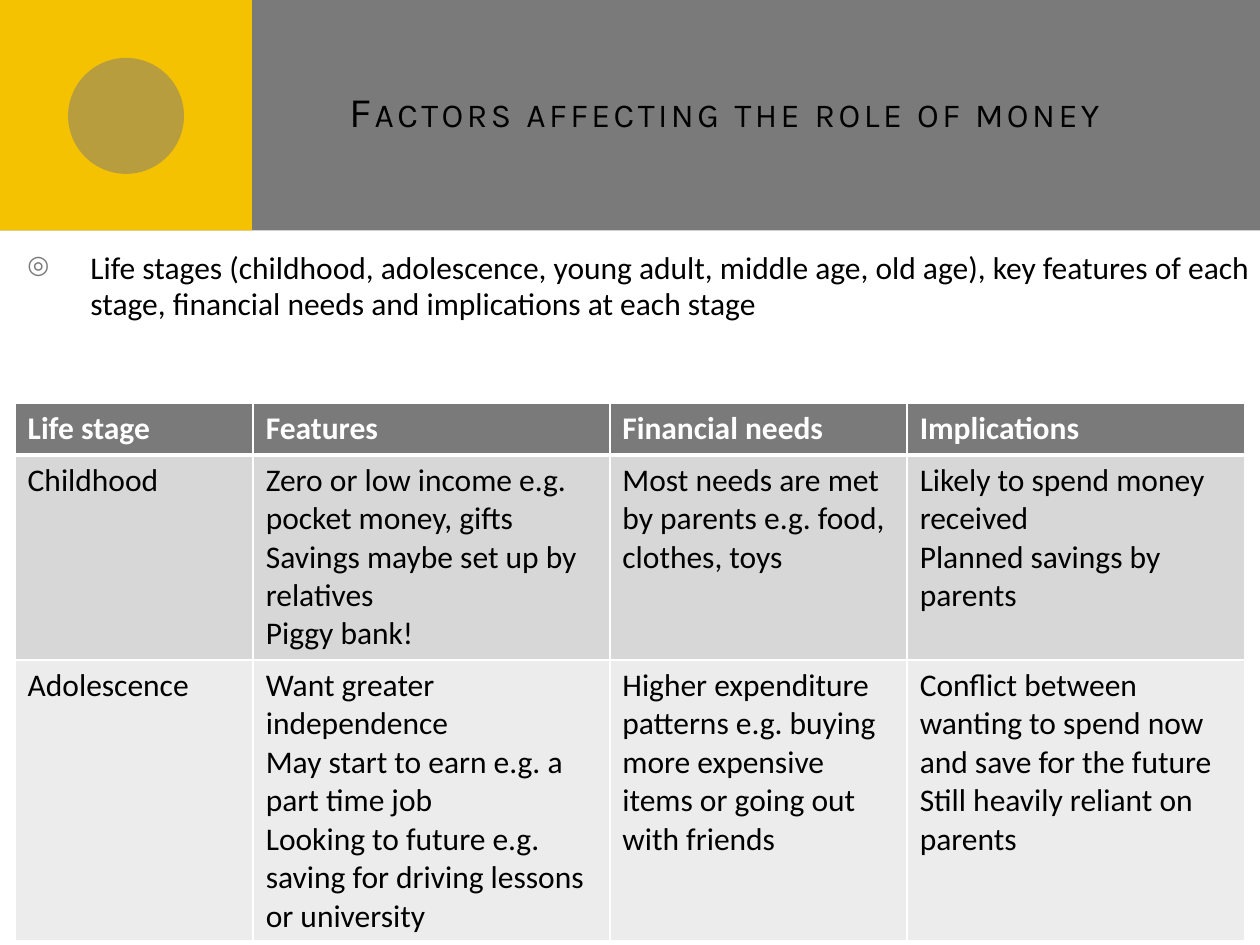
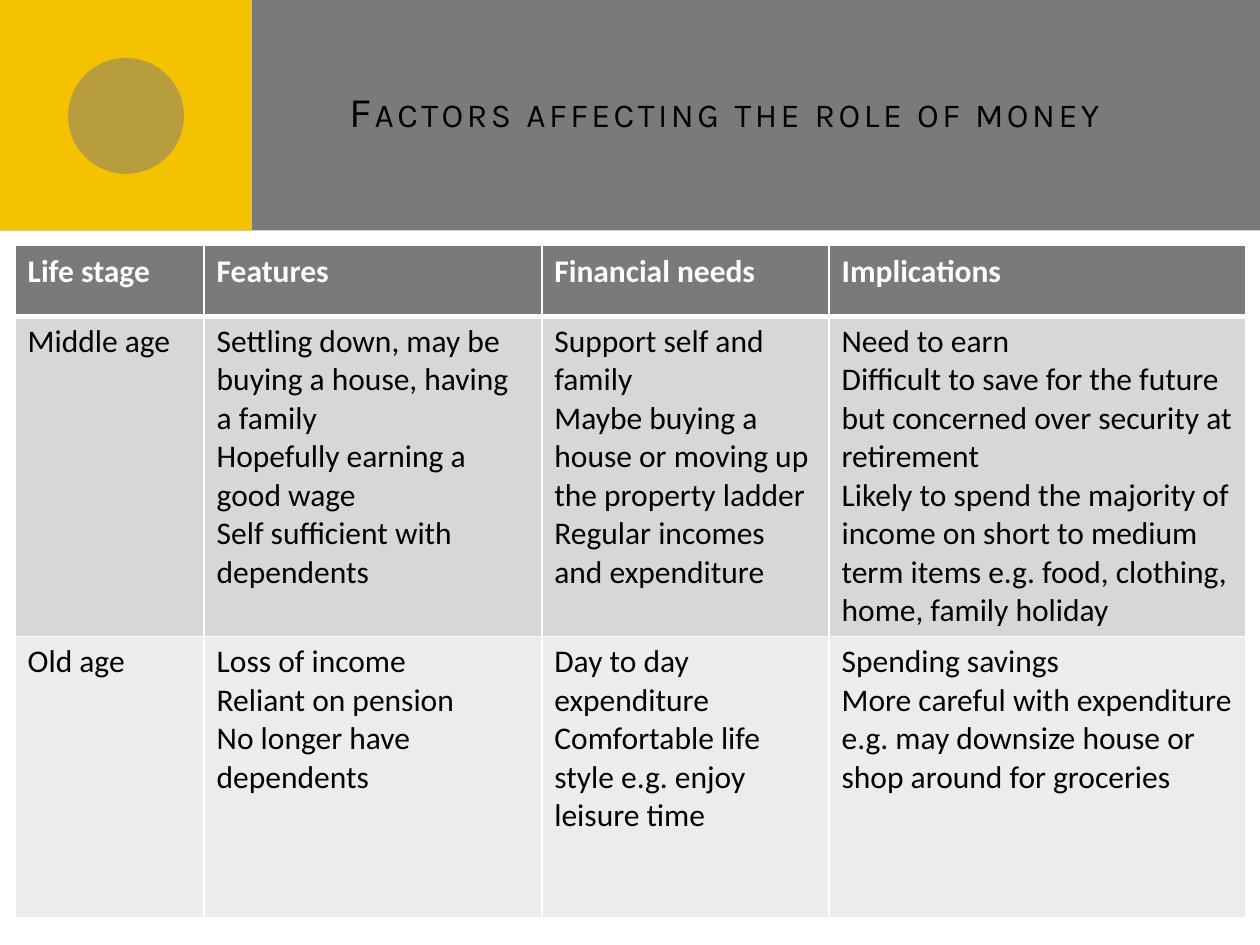
from dataclasses import dataclass

from lxml.etree import SubElement
from pptx import Presentation
from pptx.dml.color import RGBColor
from pptx.enum.shapes import MSO_SHAPE
from pptx.enum.text import MSO_ANCHOR, MSO_AUTO_SIZE, PP_ALIGN
from pptx.oxml.ns import qn
from pptx.util import Inches, Pt


@dataclass(frozen=True)
class Theme:
    grey: str = "7A7A7A"
    yellow: str = "F5C201"
    white: str = "FFFFFF"
    black: str = "000000"
    stripes: tuple = ("D7D7D7", "ECECEC")
    title_font: str = "Karla"
    body_font: str = "Calibri"
    title_size: int = 24
    body_size: int = 18


T = Theme()
TITLE = "Factors affecting the role of money"
HEADER = ["Life stage", "Features", "Financial needs", "Implications"]
TABLE_LEFT = 0.12

SLIDES = [
    {
        "bullet": "Life stages (childhood, adolescence, young adult, middle age, old age), "
                  "key features of each stage, financial needs and implications at each stage",
        "top": 3.2,
        "cols": [1.89, 2.83, 2.36, 2.68],
        "rows": [0.41, 1.63, 2.23],
        "stages": [
            ["Childhood",
             "Zero or low income e.g. pocket money, gifts\n"
             "Savings maybe set up by relatives\n"
             "Piggy bank!",
             "Most needs are met by parents e.g. food, clothes, toys",
             "Likely to spend money received\n"
             "Planned savings by parents"],
            ["Adolescence",
             "Want greater independence\n"
             "May start to earn e.g. a part time job\n"
             "Looking to future e.g. saving for driving lessons or university",
             "Higher expenditure patterns e.g. buying more expensive items "
             "or going out with friends",
             "Conflict between wanting to spend now and save for the future\n"
             "Still heavily reliant on parents"],
        ],
    },
    {
        "top": 1.95,
        "cols": [1.5, 2.68, 2.28, 3.31],
        "rows": [0.56, 2.54, 2.23],
        "stages": [
            ["Middle age",
             "Settling down, may be buying a house, having a family\n"
             "Hopefully earning a good wage\n"
             "Self sufficient with dependents",
             "Support self and family\n"
             "Maybe buying a house or moving up the property ladder\n"
             "Regular incomes and expenditure",
             "Need to earn\n"
             "Difficult to save for the future but concerned over security at retirement\n"
             "Likely to spend the majority of income on short to medium term items "
             "e.g. food, clothing, home, family holiday"],
            ["Old age",
             "Loss of income\n"
             "Reliant on pension\n"
             "No longer have dependents",
             "Day to day expenditure\n"
             "Comfortable life style e.g. enjoy leisure time",
             "Spending savings\n"
             "More careful with expenditure e.g. may downsize house or "
             "shop around for groceries"],
        ],
    },
]

# shape, place, colour, opacity in percent
BAND = [
    (MSO_SHAPE.RECTANGLE, (0, 0, 10, 1.83), T.grey, 100),
    (MSO_SHAPE.RECTANGLE, (0, 0, 2, 1.83), T.yellow, 100),
    (MSO_SHAPE.OVAL, (0.54, 0.46, 0.92, 0.92), T.grey, 50),
]


def inches(values):
    return [Inches(v) for v in values]


def set_font(font, color, **formats):
    formats = {"name": T.body_font, "size": Pt(T.body_size), "bold": False, **formats}
    for name, value in formats.items():
        setattr(font, name, value)
    font.color.rgb = RGBColor.from_string(color)


def move_band_to_layout(slide, layout):
    """Draw the band through the slide, then hand its shapes to the layout."""
    tree = layout.shapes.element
    for i, (kind, box, color, opacity) in enumerate(BAND):
        sp = slide.shapes.add_shape(kind, *inches(box))
        sp.shadow.inherit = False
        sp.line.fill.background()
        sp.fill.solid()
        sp.fill.fore_color.rgb = RGBColor.from_string(color)
        if opacity < 100:
            clr = sp.element.spPr.find(".//" + qn("a:srgbClr"))
            SubElement(clr, qn("a:alpha"), val=str(opacity * 1000))
        sp.element.nvSpPr.cNvPr.set("id", str(100 + i))
        tree.insert(2 + i, sp.element)


def add_title(slide):
    title = slide.shapes.title
    title.left, title.top, title.width, title.height = inches((2.67, 0.25, 6.83, 1.25))
    tf = title.text_frame
    tf.text = TITLE
    tf.word_wrap, tf.auto_size = True, MSO_AUTO_SIZE.NONE
    tf.vertical_anchor = MSO_ANCHOR.MIDDLE
    p = tf.paragraphs[0]
    p.alignment = PP_ALIGN.RIGHT
    r = p.runs[0]
    set_font(r.font, T.black, name=T.title_font, size=Pt(T.title_size))
    rPr = r.font._element
    rPr.set("cap", "small")
    rPr.set("spc", "200")


def add_bullet(slide, text):
    tf = slide.shapes.add_textbox(*inches((0.12, 1.94, 10, 4.2))).text_frame
    tf.word_wrap = True
    p = tf.paragraphs[0]
    p.space_before, p.line_spacing = Pt(18), 0.96
    r = p.add_run()
    r.text = text
    set_font(r.font, T.black)
    pPr = p._p.get_or_add_pPr()
    pPr.set("marL", str(Inches(0.5)))
    pPr.set("indent", str(-Inches(0.5)))
    SubElement(SubElement(pPr, qn("a:buClr")), qn("a:srgbClr"), val=T.grey)
    SubElement(pPr, qn("a:buSzPct"), val="80000")
    SubElement(pPr, qn("a:buChar"), char="◎")


def set_borders(cell, bottom):
    tcPr = cell._tc.get_or_add_tcPr()
    for side, width in (("L", 1), ("R", 1), ("T", 1), ("B", bottom)):
        ln = SubElement(tcPr, qn("a:ln" + side), w=str(Pt(width)))
        SubElement(SubElement(ln, qn("a:solidFill")), qn("a:srgbClr"), val=T.white)


def add_stage_table(slide, top, cols, rows, stages):
    place = inches((TABLE_LEFT, top, sum(cols), sum(rows)))
    table = slide.shapes.add_table(len(rows), len(cols), *place).table
    for column, width in zip(table.columns, cols):
        column.width = Inches(width)
    for i, texts in enumerate([HEADER, *stages]):
        table.rows[i].height = Inches(rows[i])
        is_header = i == 0
        fill = T.grey if is_header else T.stripes[(i - 1) % 2]
        for j, text in enumerate(texts):
            cell = table.cell(i, j)
            cell.text = text
            # the rule under the header is shared with the row below
            set_borders(cell, bottom=3 if is_header else 1)
            if i == 1:
                cell._tc.tcPr.find(qn("a:lnT")).set("w", str(Pt(3)))
            cell.fill.solid()
            cell.fill.fore_color.rgb = RGBColor.from_string(fill)
            for p in cell.text_frame.paragraphs:
                set_font(p.runs[0].font, T.white if is_header else T.black, bold=is_header)


def main():
    prs = Presentation()
    prs.slide_width, prs.slide_height = Inches(10), Inches(7.5)
    layout = prs.slide_layouts.get_by_name("Title Only")
    for i, content in enumerate(SLIDES):
        s = prs.slides.add_slide(layout)
        if i == 0:
            move_band_to_layout(s, layout)
        add_title(s)
        if "bullet" in content:
            add_bullet(s, content["bullet"])
        add_stage_table(s, *(content[key] for key in ("top", "cols", "rows", "stages")))
    prs.save("out.pptx")


if __name__ == "__main__":
    main()
